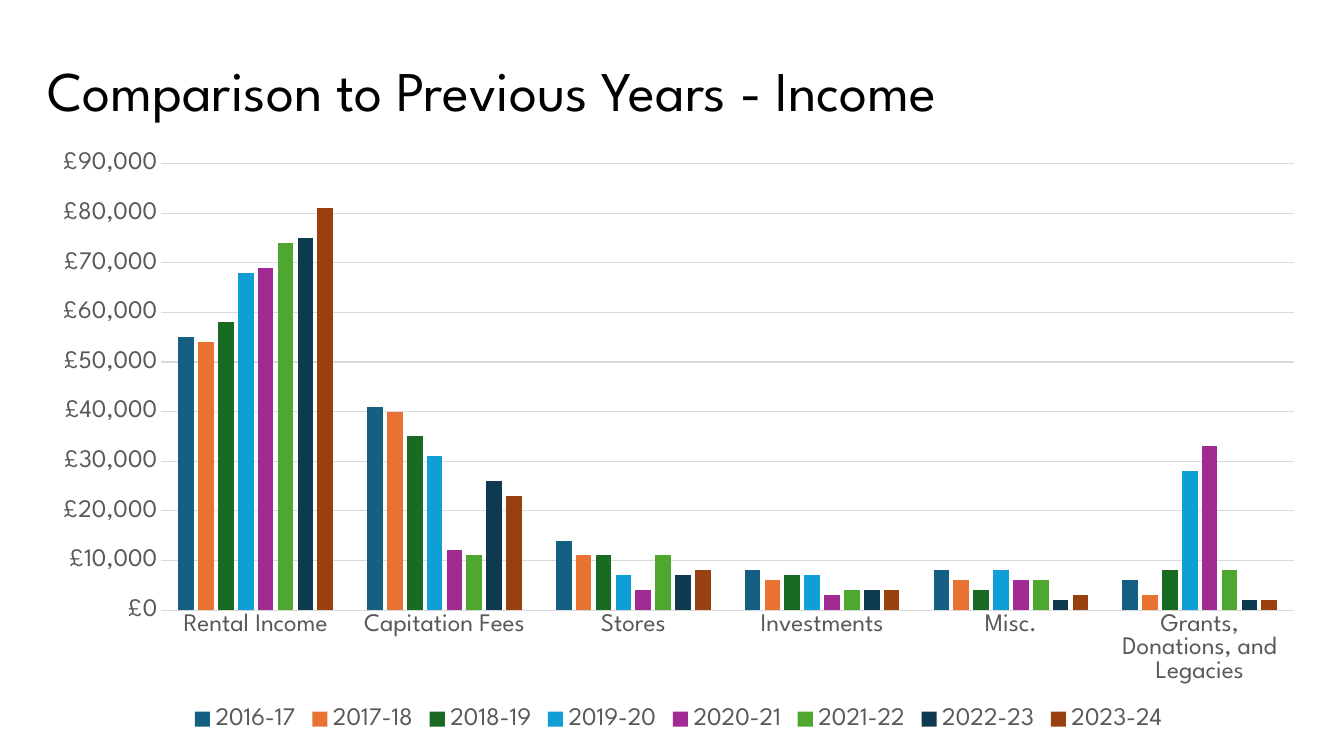
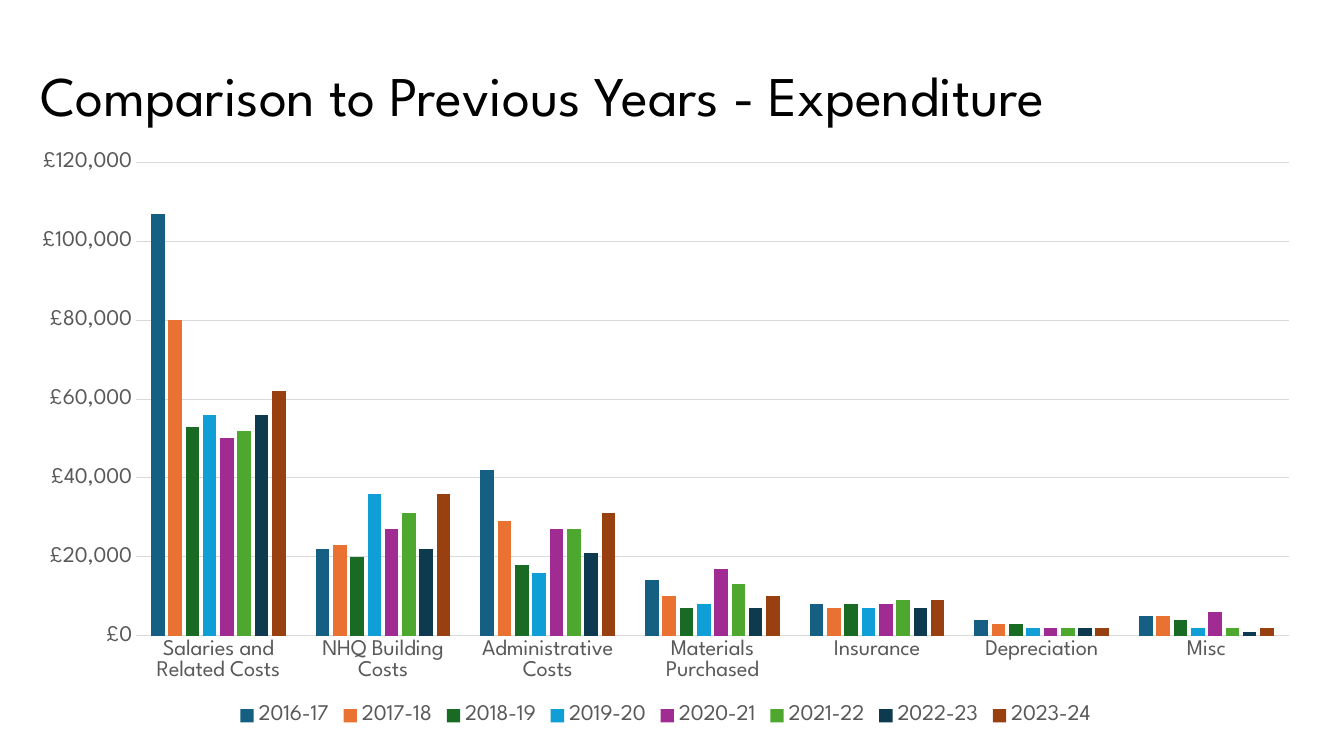
from dataclasses import dataclass

from pptx import Presentation
from pptx.chart.data import CategoryChartData as Data
from pptx.dml.color import RGBColor as Rgb
from pptx.enum.chart import XL_CHART_TYPE as Kind
from pptx.enum.chart import XL_LEGEND_POSITION as Spot
from pptx.enum.chart import XL_TICK_MARK as Tick
from pptx.enum.text import MSO_ANCHOR as Anchor
from pptx.enum.text import MSO_AUTO_SIZE as Fit
from pptx.enum.text import PP_ALIGN as Align
from pptx.util import Inches, Pt


@dataclass(frozen=True)
class Theme:
    face: str = "League Spartan"
    ink: str = "000000"
    label: str = "595959"
    grid: str = "D9D9D9"
    title: int = 40
    bars: tuple = ("156082", "E97132", "196B24", "0F9ED5",
                   "A02B93", "4EA72E", "0D3A4E", "994010")


YEARS = [f"{year}-{year - 1999}" for year in range(2016, 2024)]

INCOME = {
    "Rental Income": (55, 54, 58, 68, 69, 74, 75, 81),
    "Capitation Fees": (41, 40, 35, 31, 12, 11, 26, 23),
    "Stores": (14, 11, 11, 7, 4, 11, 7, 8),
    "Investments": (8, 6, 7, 7, 3, 4, 4, 4),
    "Misc.": (8, 6, 4, 8, 6, 6, 2, 3),
    "Grants, Donations, and Legacies": (6, 3, 8, 28, 33, 8, 2, 2),
}

COSTS = {
    "Salaries and Related Costs": (107, 80, 53, 56, 50, 52, 56, 62),
    "NHQ Building Costs": (22, 23, 20, 36, 27, 31, 22, 36),
    "Administrative Costs": (42, 29, 18, 16, 27, 27, 21, 31),
    "Materials Purchased": (14, 10, 7, 8, 17, 13, 7, 10),
    "Insurance": (8, 7, 8, 7, 8, 9, 7, 9),
    "Depreciation": (4, 3, 3, 2, 2, 2, 2, 2),
    "Misc": (5, 5, 4, 2, 6, 2, 1, 2),
}


class Deck:
    """Holds the style and the slide being built."""

    def __init__(self, theme):
        self.theme = theme
        self.show = Presentation()
        self.show.slide_width = Inches(13.33)
        self.show.slide_height = Inches(7.5)
        self.slide = None

    def font(self, font, size, color):
        font.name = self.theme.face
        font.size = Pt(size)
        font.bold = False
        font.color.rgb = Rgb.from_string(color)

    def rule(self, line):
        line.width = Pt(0.75)
        line.color.rgb = Rgb.from_string(self.theme.grid)

    def page(self, text, box):
        self.slide = self.show.slides.add_slide(self.show.slide_layouts[5])
        title = self.slide.shapes.title
        title.left, title.top, title.width, title.height = map(Inches, box)
        frame = title.text_frame
        frame.text = text
        frame.word_wrap = True
        frame.auto_size = Fit.NONE
        frame.vertical_anchor = Anchor.MIDDLE
        para = frame.paragraphs[0]
        para.alignment = Align.LEFT
        para.line_spacing = 0.9
        self.font(para.font, self.theme.title, self.theme.ink)

    def chart(self, table, box, size, top, step):
        data = Data(number_format='"£"#,##0')
        data.categories = list(table)
        for year, row in zip(YEARS, zip(*table.values())):
            data.add_series(year, [value * 1000 for value in row])
        chart = self.slide.shapes.add_chart(
            Kind.COLUMN_CLUSTERED, *map(Inches, box), data).chart
        self.font(chart.font, size, self.theme.ink)
        chart.has_title = False
        self.plot(chart.plots[0])
        self.axes(chart, size, top, step)
        chart.has_legend = True
        chart.legend.position = Spot.BOTTOM
        chart.legend.include_in_layout = False
        self.font(chart.legend.font, size, self.theme.label)

    def plot(self, plot):
        plot.gap_width = 219
        plot.overlap = -27
        plot.vary_by_categories = False
        for series, color in zip(plot.series, self.theme.bars):
            series.invert_if_negative = False
            series.format.fill.solid()
            series.format.fill.fore_color.rgb = Rgb.from_string(color)

    def axes(self, chart, size, top, step):
        names, values = chart.category_axis, chart.value_axis
        for axis in (names, values):
            axis.major_tick_mark = axis.minor_tick_mark = Tick.NONE
            self.font(axis.tick_labels.font, size, self.theme.label)
        self.rule(names.format.line)
        values.format.line.fill.background()
        values.has_major_gridlines = True
        self.rule(values.major_gridlines.format.line)
        values.minimum_scale = 0
        values.maximum_scale = top
        values.major_unit = step
        values.tick_labels.number_format = '"£"#,##0'
        values.tick_labels.number_format_is_linked = False


def main():
    deck = Deck(Theme())
    deck.page("Comparison to Previous Years - Income", (0.37, 0.2, 11.5, 1.45))
    deck.chart(INCOME, (0.37, 1.39, 12.72, 5.91), 18, 90000, 10000)
    deck.page("Comparison to Previous Years - Expenditure",
              (0.3, 0.25, 12.12, 1.45))
    deck.chart(COSTS, (0.16, 1.39, 12.88, 5.86), 16, 120000, 20000)
    deck.show.save("out.pptx")


if __name__ == "__main__":
    main()
